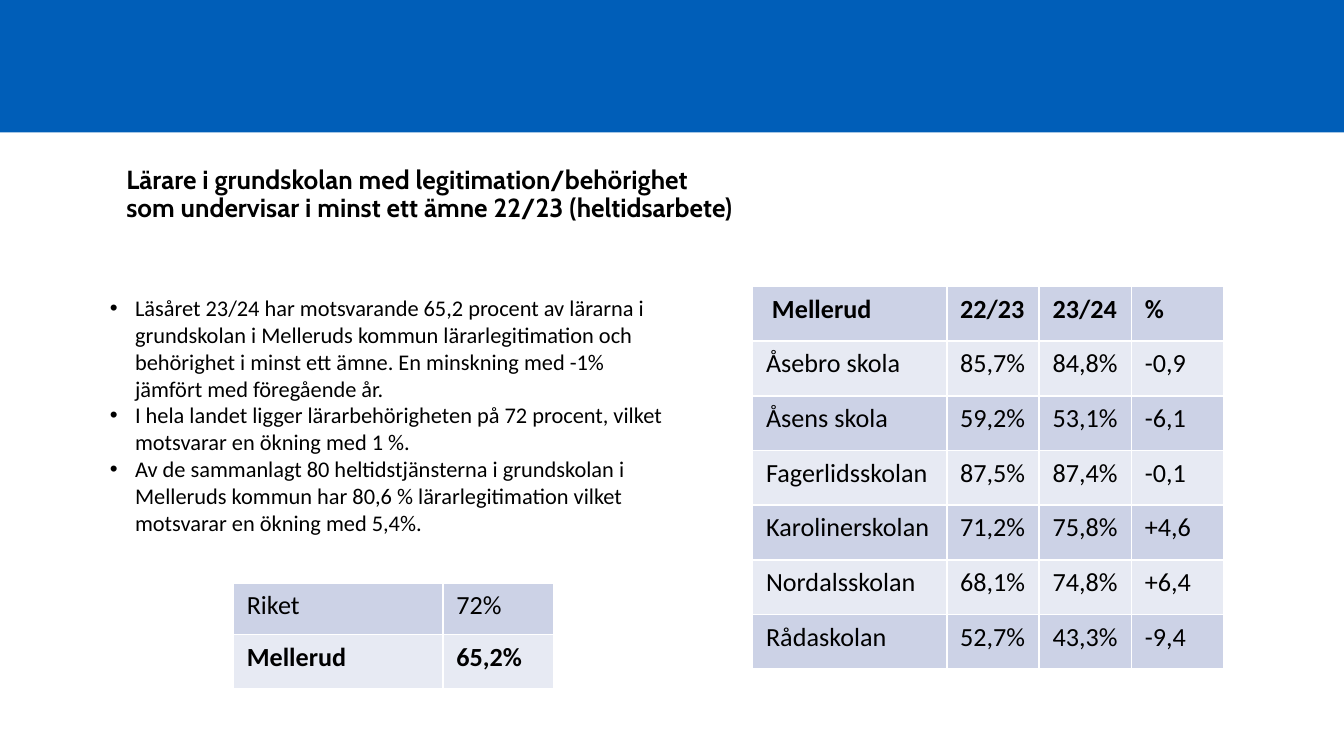
import copy

import pptx
import pptx.dml.color
import pptx.enum.shapes
import pptx.enum.text
import pptx.oxml
import pptx.oxml.ns
import pptx.util
from pptx.util import Pt

BLUE = pptx.dml.color.RGBColor(0x00, 0x5E, 0xB8)
BLACK = pptx.dml.color.RGBColor(0x00, 0x00, 0x00)
DARK_BAND = pptx.dml.color.RGBColor(0xCC, 0xD2, 0xE6)
LIGHT_BAND = pptx.dml.color.RGBColor(0xE7, 0xEA, 0xF3)
WHITE = pptx.dml.color.RGBColor(0xFF, 0xFF, 0xFF)

TITLE = (
    "Lärare i grundskolan med legitimation/behörighet\n"
    "som undervisar i minst ett ämne 22/23 (heltidsarbete)"
)
FINDINGS = [
    "Läsåret 23/24 har motsvarande 65,2 procent av lärarna i grundskolan i "
    "Melleruds kommun lärarlegitimation och behörighet i minst ett ämne. "
    "En minskning med -1% jämfört med föregående år.",
    "I hela landet ligger lärarbehörigheten på 72 procent, vilket motsvarar "
    "en ökning med 1 %.",
    "Av de sammanlagt 80 heltidstjänsterna i grundskolan i Melleruds kommun "
    "har 80,6 % lärarlegitimation vilket motsvarar en ökning med 5,4%.",
]
NATIONAL_ROWS = [["Riket", "72%"], ["Mellerud", "65,2%"]]
SCHOOL_ROWS = [
    [" Mellerud", "22/23", "23/24", "%"],
    ["Åsebro skola", "85,7%", "84,8%", "-0,9"],
    ["Åsens skola", "59,2%", "53,1%", "-6,1"],
    ["Fagerlidsskolan", "87,5%", "87,4%", "-0,1"],
    ["Karolinerskolan", "71,2%", "75,8%", "+4,6"],
    ["Nordalsskolan", "68,1%", "74,8%", "+6,4"],
    ["Rådaskolan", "52,7%", "43,3%", "-9,4"],
]


def write_text(paragraph, text, size=14, font="Calibri", bold=False, line_spacing=None):
    """Fill a paragraph with left-aligned text; a newline becomes a line break."""
    paragraph.text = text
    paragraph.alignment = pptx.enum.text.PP_ALIGN.LEFT
    if line_spacing:
        paragraph.line_spacing = line_spacing
    for run in paragraph.runs:
        run.font.name = font
        run.font.size = Pt(size)
        run.font.bold = bold
        run.font.color.rgb = BLACK
    # Line breaks take the format of the text around them
    for line_break in paragraph._p.findall(pptx.oxml.ns.qn("a:br")):
        line_break.append(copy.deepcopy(paragraph.runs[0].font._element))


def add_band(slide):
    band = slide.shapes.add_shape(
        pptx.enum.shapes.MSO_SHAPE.RECTANGLE, Pt(0), Pt(0), Pt(720), Pt(71)
    )
    band.shadow.inherit = False
    band.fill.solid()
    band.fill.fore_color.rgb = BLUE
    band.line.fill.background()


def set_title(slide, text):
    title = slide.shapes.title
    title.left, title.top = Pt(60.5), Pt(65.5)
    title.width, title.height = Pt(664), Pt(57.6)
    title.text_frame.vertical_anchor = pptx.enum.text.MSO_ANCHOR.BOTTOM
    title.text_frame.auto_size = pptx.enum.text.MSO_AUTO_SIZE.NONE
    write_text(
        title.text_frame.paragraphs[0], text, font="Cabin", bold=True, line_spacing=0.9
    )


def add_bullets(slide, texts):
    text_box = slide.shapes.add_textbox(Pt(51.8), Pt(154), Pt(318), Pt(138))
    text_frame = text_box.text_frame
    text_frame.word_wrap = True
    for index, text in enumerate(texts):
        paragraph = text_frame.add_paragraph() if index else text_frame.paragraphs[0]
        properties = paragraph._p.get_or_add_pPr()
        properties.set("marL", str(Pt(13.5)))
        properties.set("indent", str(-Pt(13.5)))
        namespace = pptx.oxml.ns.nsdecls("a")
        for markup in ('a:buFont {} typeface="Arial"', 'a:buChar {} char="•"'):
            properties.append(
                pptx.oxml.parse_xml("<" + markup.format(namespace) + "/>")
            )
        write_text(paragraph, text, size=12)


def set_borders(cell):
    properties = cell._tc.get_or_add_tcPr()
    for side in ("lnL", "lnR", "lnT", "lnB"):
        properties.append(
            pptx.oxml.parse_xml(
                f'<a:{side} {pptx.oxml.ns.nsdecls("a")} w="{Pt(1)}"><a:solidFill>'
                f'<a:srgbClr val="{WHITE}"/></a:solidFill></a:{side}>'
            )
        )


def add_banded_table(slide, left, top, rows, column_widths, row_heights, bold_row):
    table = slide.shapes.add_table(
        len(rows), len(column_widths), Pt(left), Pt(top),
        Pt(sum(column_widths)), Pt(sum(row_heights)),
    ).table
    table.first_row = False
    table.horz_banding = False
    for column, width in zip(table.columns, column_widths):
        column.width = Pt(width)
    for row_index, values in enumerate(rows):
        table.rows[row_index].height = Pt(row_heights[row_index])
        for column_index, value in enumerate(values):
            cell = table.cell(row_index, column_index)
            set_borders(cell)
            cell.fill.solid()
            cell.fill.fore_color.rgb = LIGHT_BAND if row_index % 2 else DARK_BAND
            write_text(
                cell.text_frame.paragraphs[0], value, bold=row_index == bold_row
            )


def main():
    presentation = pptx.Presentation()
    presentation.slide_width, presentation.slide_height = Pt(720), Pt(405)
    slide = presentation.slides.add_slide(presentation.slide_layouts[5])

    # Heading
    add_band(slide)
    set_title(slide, TITLE)

    # National comparison
    add_banded_table(
        slide, 125, 312.5, NATIONAL_ROWS, [112.3, 59.5], [27.5, 29], bold_row=1
    )

    # Results by school
    add_banded_table(
        slide, 403.2, 153.5, SCHOOL_ROWS, [104, 49.5, 49.5, 49.5],
        [29.3] * len(SCHOOL_ROWS), bold_row=0,
    )

    # Findings
    add_bullets(slide, FINDINGS)

    presentation.save("out.pptx")


if __name__ == "__main__":
    main()
